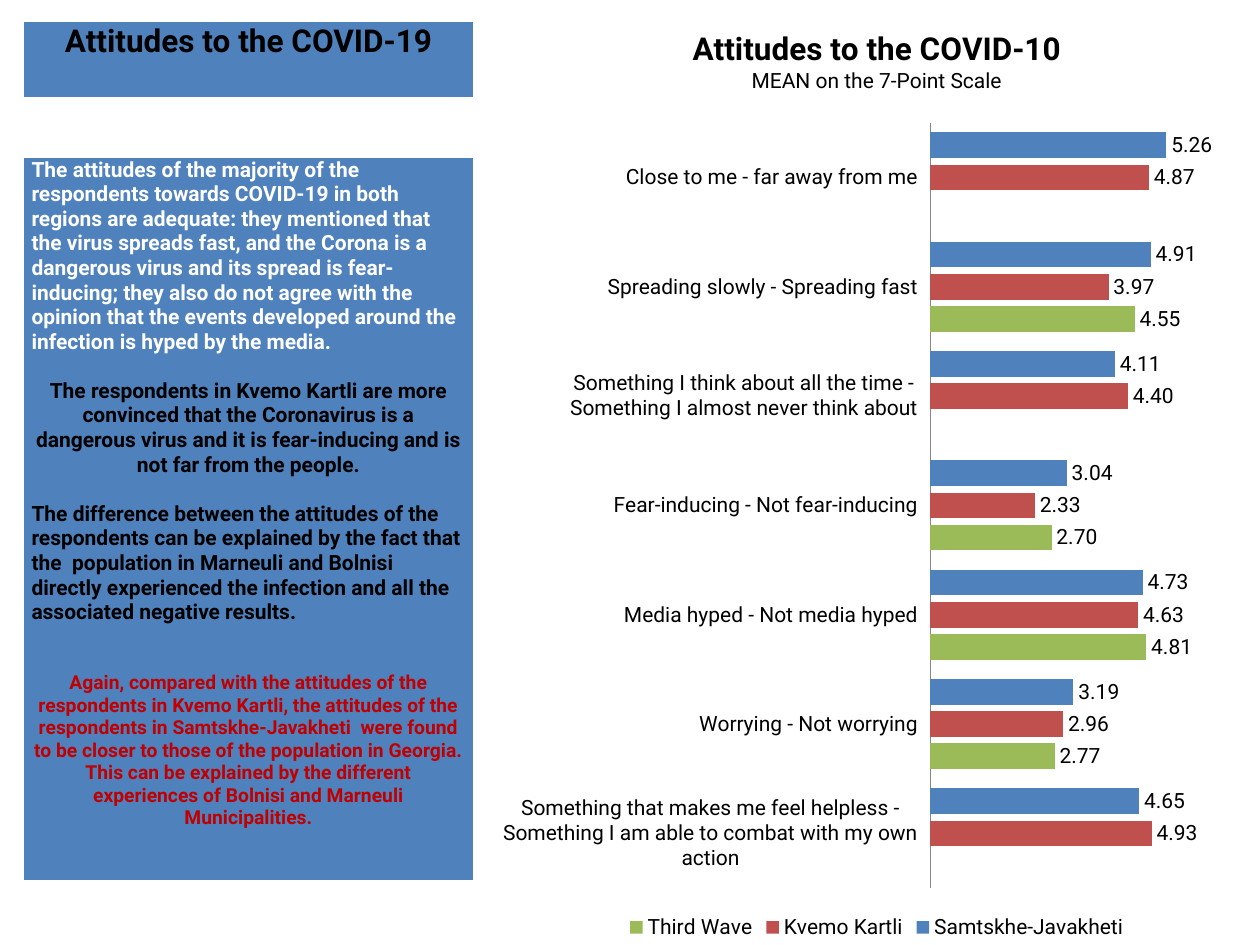
from lxml import etree
from pptx import Presentation
from pptx.chart.data import CategoryChartData
from pptx.dml.color import RGBColor
from pptx.enum.chart import XL_CHART_TYPE, XL_LABEL_POSITION, XL_LEGEND_POSITION, XL_TICK_LABEL_POSITION, XL_TICK_MARK
from pptx.enum.text import PP_ALIGN
from pptx.oxml import parse_xml
from pptx.oxml.ns import nsdecls, qn
from pptx.util import Pt

BAR_CLUSTERED = XL_CHART_TYPE.BAR_CLUSTERED
OUTSIDE_END = XL_LABEL_POSITION.OUTSIDE_END
BOTTOM = XL_LEGEND_POSITION.BOTTOM
LABELS_LOW, NO_LABELS = XL_TICK_LABEL_POSITION.LOW, XL_TICK_LABEL_POSITION.NONE
NO_TICKS = XL_TICK_MARK.NONE
LEFT, CENTER = PP_ALIGN.LEFT, PP_ALIGN.CENTER

FONT = "Roboto"
NUMBER_FORMAT = "###0.00"
COLORS = {"blue": "4F81BD", "red": "C0504D", "green": "9BBB59", "black": "000000",
          "white": "FFFFFF", "dark_red": "C00000", "axis": "868686"}


def add_text(frame, text, size=12, color="black", bold=True, align=LEFT, before=0, spacing=1.0):
    """Fill the frame's empty first paragraph, or append a new one."""
    paragraph = frame.paragraphs[-1]
    if paragraph.runs:
        paragraph = frame.add_paragraph()
    paragraph.alignment = align
    paragraph.space_before = Pt(before)
    paragraph.line_spacing = spacing
    run = paragraph.add_run()
    run.text = text
    run.font.name, run.font.size, run.font.bold = FONT, Pt(size), bold
    run.font.color.rgb = RGBColor.from_string(COLORS[color])


def add_panel(slide, top, height):
    """Add a one-cell blue table with white borders and return its text frame."""
    table = slide.shapes.add_table(1, 1, Pt(13), Pt(top), Pt(258), Pt(height)).table
    table.first_row = table.horz_banding = False
    cell = table.cell(0, 0)
    cell.margin_left = cell.margin_right = Pt(5)
    cell.margin_top = cell.margin_bottom = 0
    cell.fill.solid()
    cell.fill.fore_color.rgb = RGBColor.from_string(COLORS["blue"])
    properties = cell._tc.get_or_add_tcPr()
    for index, (side, width) in enumerate([("L", 1), ("R", 1), ("T", 1), ("B", 3)]):
        properties.insert(index, parse_xml(
            f'<a:ln{side} {nsdecls("a")} w="{Pt(width)}"><a:solidFill>'
            f'<a:srgbClr val="{COLORS["white"]}"/></a:solidFill></a:ln{side}>'))
    return cell.text_frame


presentation = Presentation()
presentation.slide_width, presentation.slide_height = Pt(720), Pt(540)
slide = presentation.slides.add_slide(presentation.slide_layouts[6])

# Chart
chart_data = CategoryChartData(number_format=NUMBER_FORMAT)
chart_data.categories = [
    "Close to me - far away from me",
    "Spreading slowly - Spreading fast",
    "Something I think about all the time - Something I almost never think about",
    "Fear-inducing - Not fear-inducing",
    "Media hyped - Not media hyped",
    "Worrying - Not worrying",
    "Something that makes me feel helpless - Something I am able to combat with my own action",
]
series_rows = [
    ("Samtskhe-Javakheti", "blue", [5.26, 4.91, 4.11, 3.04, 4.73, 3.19, 4.65]),
    ("Kvemo Kartli", "red", [4.87, 3.97, 4.40, 2.33, 4.63, 2.96, 4.93]),
    ("Third Wave", "green", [None, 4.55, None, 2.70, 4.81, 2.77, None]),
]
for name, color, values in series_rows:
    chart_data.add_series(name, values)
chart = slide.shapes.add_chart(BAR_CLUSTERED, Pt(282), 0, Pt(438), Pt(540), chart_data).chart
chart.font.name, chart.font.size = FONT, Pt(12)
chart.font.color.rgb = RGBColor.from_string(COLORS["black"])

title_frame = chart.chart_title.text_frame
add_text(title_frame, "Attitudes to the COVID-10", size=18, align=CENTER)
add_text(title_frame, "MEAN on the 7-Point Scale", bold=False, align=CENTER)
chart.chart_title.include_in_layout = False
chart.has_legend = True
chart.legend.position = BOTTOM
chart.legend.include_in_layout = False

plot = chart.plots[0]
plot.gap_width, plot.overlap, plot.vary_by_categories = 75, -25, False
for series, (name, color, values) in zip(plot.series, series_rows):
    series.format.fill.solid()
    series.format.fill.fore_color.rgb = RGBColor.from_string(COLORS[color])
    series.invert_if_negative = False
    labels = series.data_labels
    labels.show_value = True
    labels.position = OUTSIDE_END
    labels.number_format, labels.number_format_is_linked = NUMBER_FORMAT, False

category_axis, value_axis = chart.category_axis, chart.value_axis
for axis in (category_axis, value_axis):
    axis.major_tick_mark = axis.minor_tick_mark = NO_TICKS
    axis.has_major_gridlines = False
category_axis.reverse_order = True
category_axis.tick_label_position = LABELS_LOW
category_axis.format.line.color.rgb = RGBColor.from_string(COLORS["axis"])
value_axis.minimum_scale, value_axis.maximum_scale = 0, 7
value_axis.tick_label_position = NO_LABELS
value_axis.format.line.fill.background()

# Fix the inner plot area as fractions of the chart
plot_area = chart._chartSpace.chart.plotArea
for old_layout in plot_area.findall(qn("c:layout")):
    plot_area.remove(old_layout)
layout = etree.Element(qn("c:layout"))
manual = etree.SubElement(layout, qn("c:manualLayout"))
for tag, value in [("layoutTarget", "inner"), ("xMode", "edge"), ("yMode", "edge"),
                   ("x", 0.57), ("y", 0.13), ("w", 0.41), ("h", 0.81)]:
    etree.SubElement(manual, qn(f"c:{tag}")).set("val", str(value))
plot_area.insert(0, layout)

# Heading and commentary
add_text(add_panel(slide, 12, 45), "Attitudes to the COVID-19", size=18, align=CENTER, spacing=1.07)

commentary = add_panel(slide, 90, 414)
add_text(commentary,
         "The attitudes of the majority of the respondents towards COVID-19 in both regions are "
         "adequate: they mentioned that the virus spreads fast, and the Corona is a dangerous virus "
         "and its spread is fear-inducing; they also do not agree with the opinion that the events "
         "developed around the infection is hyped by the media.", color="white")
add_text(commentary,
         "The respondents in Kvemo Kartli are more convinced that the Coronavirus is a dangerous "
         "virus and it is fear-inducing and is not far from the people.", align=CENTER, before=14)
add_text(commentary,
         "The difference between the attitudes of the respondents can be explained by the fact that "
         "the  population in Marneuli and Bolnisi directly experienced the infection and all the "
         "associated negative results.", before=14)
add_text(commentary,
         "Again, compared with the attitudes of the respondents in Kvemo Kartli, the attitudes of "
         "the respondents in Samtskhe-Javakheti  were found to be closer to those of the population "
         "in Georgia. This can be explained by the different experiences of Bolnisi and Marneuli "
         "Municipalities.", size=11, color="dark_red", align=CENTER, before=27)

presentation.save("out.pptx")
